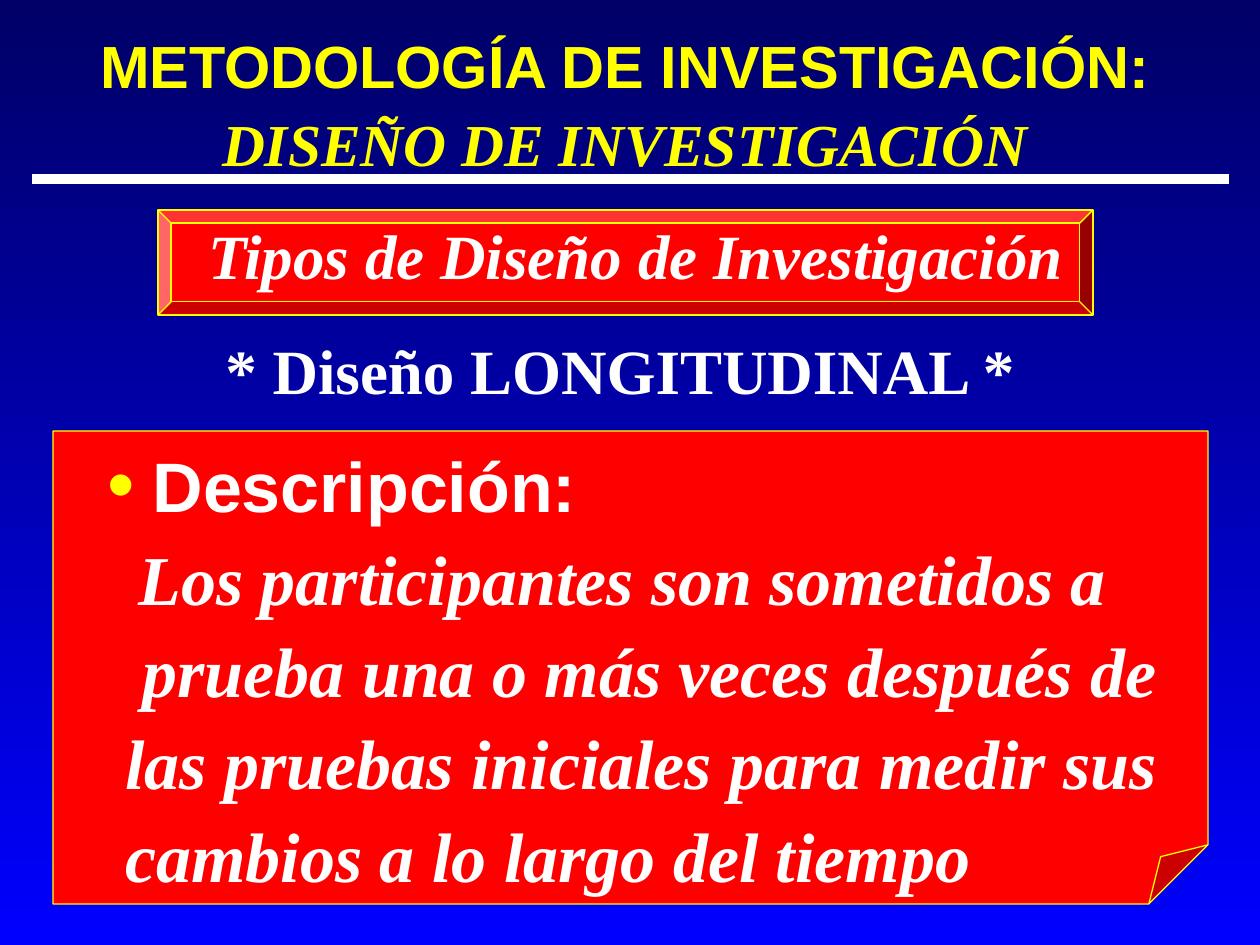
from lxml.etree import SubElement
from pptx import Presentation
from pptx.dml.color import RGBColor
from pptx.enum.shapes import MSO_CONNECTOR, MSO_SHAPE
from pptx.enum.text import MSO_ANCHOR, MSO_AUTO_SIZE, PP_ALIGN
from pptx.oxml import parse_xml
from pptx.oxml.ns import nsdecls, qn
from pptx.util import Pt

NAVY = RGBColor(0x00, 0x00, 0x66)
BLUE = RGBColor(0x00, 0x00, 0xFF)
RED = RGBColor(0xFF, 0x00, 0x00)
YELLOW = RGBColor(0xFF, 0xFF, 0x00)
WHITE = RGBColor(0xFF, 0xFF, 0xFF)
SANS, SERIF = "Arial", "Times New Roman"

TITLE = ("METODOLOGÍA DE INVESTIGACIÓN:", "DISEÑO DE INVESTIGACIÓN")
BANNER = "Tipos de Diseño de Investigación"
DESIGN = "* Diseño LONGITUDINAL *"
HEADING = "Descripción:"
HEADING_INDENT = 45
DESCRIPTION = [
    ("Los participantes son sometidos a", 31),
    ("prueba una o más veces después de", 35),
    ("las pruebas iniciales para medir sus", 18),
    ("cambios a lo largo del tiempo", 18),
]
PANELS = [
    (MSO_SHAPE.BEVEL, (158, 210, 935, 105)),
    (MSO_SHAPE.FOLDED_CORNER, (53, 431, 1155, 473)),
]
TITLE_BOX = (53, 42, 1144, 116)
BANNER_BOX = (179, 231, 914, 84)
DESIGN_BOX = (195, 325, 850, 88)
BODY_BOX = (95, 428, 1081, 474)
RULE = (32, 179, 1229, 179)


def px(value):
    return round(value * 914400 / 126)


def place(shape, box):
    shape.left, shape.top, shape.width, shape.height = map(px, box)


def style(run, size, font, color=WHITE, italic=False):
    run.font.size = Pt(size)
    run.font.name = font
    run.font.bold = True
    run.font.italic = italic
    run.font.color.rgb = color


def indent(paragraph, left, first=0):
    properties = paragraph._p.get_or_add_pPr()
    properties.set("marL", str(px(left)))
    properties.set("indent", str(px(first)))
    return properties


def add_label(slide, box, text, italic=False):
    label = slide.shapes.add_textbox(*map(px, box))
    label.text_frame.word_wrap = True
    paragraph = label.text_frame.paragraphs[0]
    paragraph.text = text
    paragraph.alignment = PP_ALIGN.CENTER
    style(paragraph.runs[0], 36, SERIF, italic=italic)
    return paragraph


def add_text_shadow(run):
    effects = parse_xml(
        f'<a:effectLst {nsdecls("a")}><a:outerShdw dist="35921" dir="2700000">'
        '<a:srgbClr val="808080"/></a:outerShdw></a:effectLst>')
    run.font._element.find(qn("a:solidFill")).addnext(effects)


def set_adjustment(shape, value):
    guides = shape._element.spPr.find(qn("a:prstGeom")).get_or_add_avLst()
    for guide in list(guides):
        guides.remove(guide)
    SubElement(guides, qn("a:gd"), name="adj", fmla=f"val {value}")


def fill_title(title):
    place(title, TITLE_BOX)
    frame = title.text_frame
    frame.auto_size = MSO_AUTO_SIZE.NONE
    frame.vertical_anchor = MSO_ANCHOR.MIDDLE
    paragraph = frame.paragraphs[0]
    paragraph.text = "\v".join(TITLE)
    paragraph.alignment = PP_ALIGN.CENTER
    paragraph.line_spacing = 1.1
    for run, font in zip(paragraph.runs, (SANS, SERIF)):
        style(run, 34, font, YELLOW, italic=font == SERIF)


def fill_body(body):
    place(body, BODY_BOX)
    frame = body.text_frame
    frame.auto_size = MSO_AUTO_SIZE.NONE
    frame.text = "\n".join([HEADING] + [line for line, _ in DESCRIPTION])
    for paragraph in frame.paragraphs:
        paragraph.line_spacing = 1.1
        paragraph.space_before = Pt(0)

    heading, *lines = frame.paragraphs
    style(heading.runs[0], 40, SANS)
    properties = indent(heading, HEADING_INDENT, -HEADING_INDENT)
    bullet_color = SubElement(properties, qn("a:buClr"))
    SubElement(bullet_color, qn("a:srgbClr"), val=str(YELLOW))
    SubElement(properties, qn("a:buSzPct"), val="112000")
    SubElement(properties, qn("a:buChar"), char="•")
    for paragraph, (_, left) in zip(lines, DESCRIPTION):
        style(paragraph.runs[0], 40, SERIF, italic=True)
        SubElement(indent(paragraph, left), qn("a:buNone"))


def main():
    presentation = Presentation()
    presentation.slide_width, presentation.slide_height = px(1260), px(945)
    slide = presentation.slides.add_slide(presentation.slide_layouts[1])
    title, body = slide.placeholders

    background = slide.background.fill
    background.gradient()
    background.gradient_angle = 270
    for stop, color in zip(background.gradient_stops, (NAVY, BLUE)):
        stop.color.rgb = color

    for kind, box in PANELS:
        panel = slide.shapes.add_shape(kind, *map(px, box))
        set_adjustment(panel, 12500)
        panel.shadow.inherit = False
        panel.fill.solid()
        panel.fill.fore_color.rgb = RED
        panel.line.color.rgb = YELLOW
        panel.line.width = Pt(0.75)

    banner = add_label(slide, BANNER_BOX, BANNER, italic=True)
    banner.line_spacing = 0.7
    add_text_shadow(banner.runs[0])
    add_label(slide, DESIGN_BOX, DESIGN)

    fill_title(title)
    fill_body(body)
    for placeholder in (body, title):
        slide.shapes._spTree.append(placeholder._element)

    rule = slide.shapes.add_connector(MSO_CONNECTOR.STRAIGHT, *map(px, RULE))
    rule.line.color.rgb = WHITE
    rule.line.width = Pt(6)
    SubElement(rule._element.spPr, qn("a:effectLst"))

    presentation.save("out.pptx")


if __name__ == "__main__":
    main()
